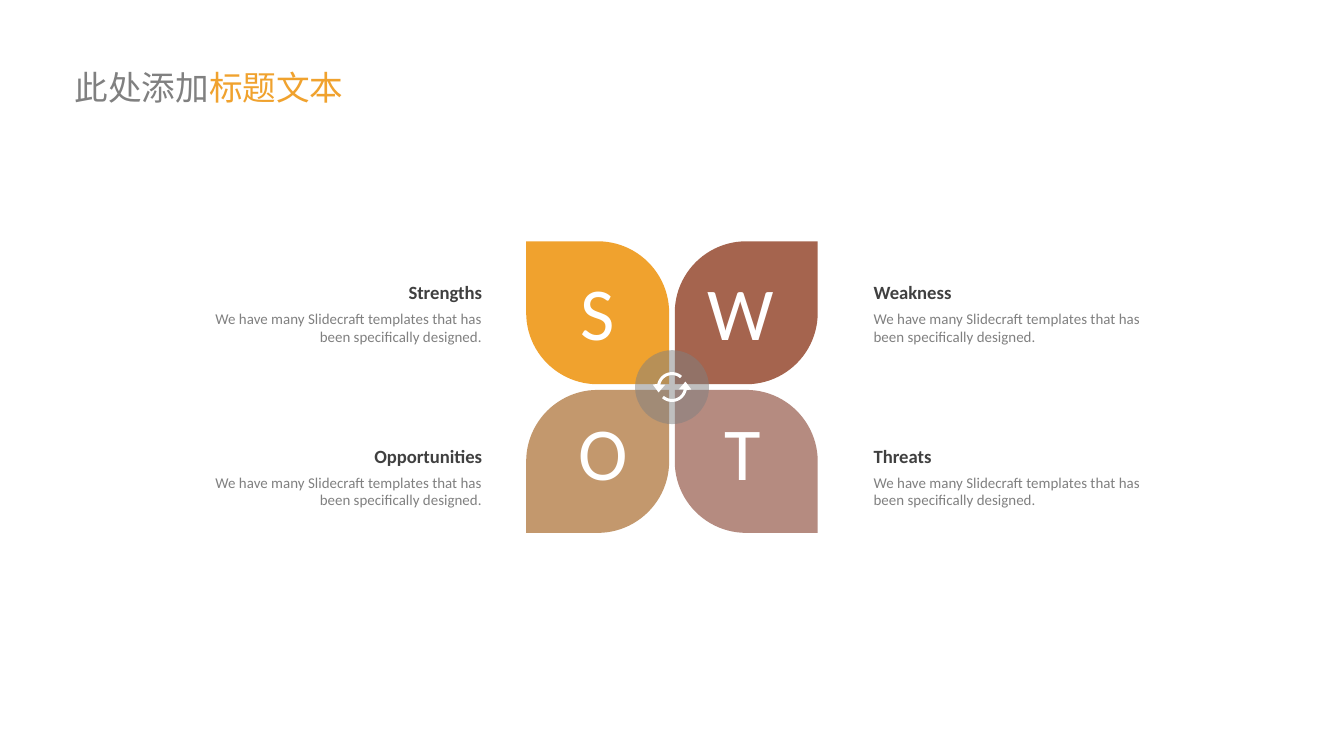
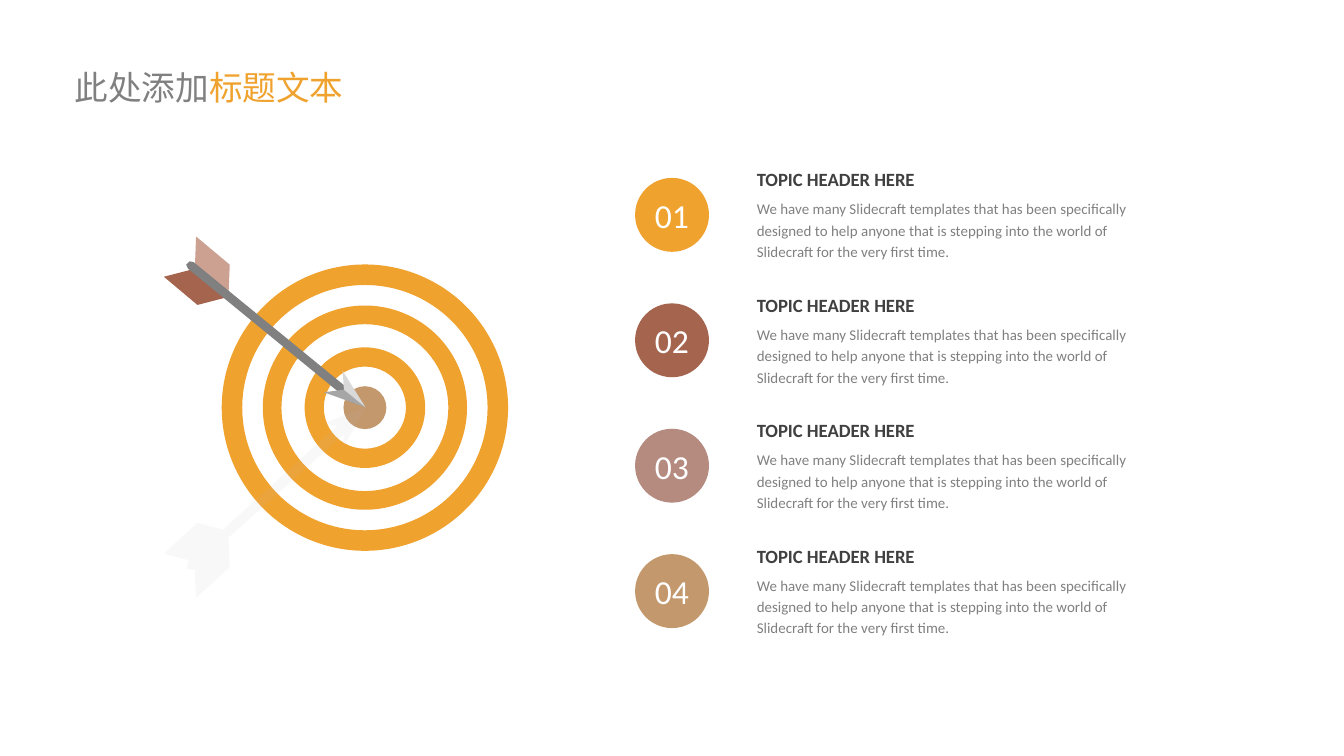
import math

from pptx import Presentation
from pptx import util as u
from pptx.dml.color import RGBColor
from pptx.enum import shapes, text
from pptx.oxml.ns import qn
from lxml import etree

COLORS = {
    "orange": "F0A22E", "rust": "A5644E", "tan": "C3986D", "rose": "B58B80",
    "blush": "CCA192", "gray": "808080", "dark": "404040", "white": "FFFFFF",
    "steel": "A6A6A6", "silver": "D9D9D9", "shade": "BFBFBF",
}
LATIN, CJK = "Calibri", "Noto Sans CJK SC"
SWOT_BODY = "We have many Slidecraft templates that has been specifically designed."
TOPIC_BODY = ("We have many Slidecraft templates that has been specifically designed "
              "to help anyone that is stepping into the world of Slidecraft "
              "for the very first time.")
CENTER_X, CENTER_Y = 360, 207.4
PETAL, HALF_GAP = 76.6, 1.5
BADGE = 39.6
SWOT = [
    ("S", "Strengths", "orange", 311, 18.7),
    ("W", "Weakness", "rust", 378.7, 36),
    ("O", "Opportunities", "tan", 309.6, 26.6),
    ("T", "Threats", "rose", 388.1, 19.4),
]
RINGS = [(153.4, 11), (109.4, 10), (64.6, 10.3)]
ARROW = [
    ("rust", [(122.4, 159.1), (105.8, 163.4), (87.8, 148.3), (104.4, 144)]),
    ("blush", [(122.4, 159.1), (123.1, 141.8), (105.1, 126.7), (104.4, 144)]),
    ("gray", [(100.8, 144), (99.7, 141.8), (101.5, 140), (103.7, 140.4),
              (190.8, 211.7), (191.9, 214.2), (189.4, 216), (187.9, 215.3)]),
    ("steel", [(173.5, 210.2), (195.8, 218.2), (184.3, 208.8)]),
    ("silver", [(184.3, 208.8), (195.8, 218.2), (183.6, 198.7)]),
]
ARROW_SHADOW = [
    (195.8, 218.2), (183.6, 240.5), (184.3, 232.6), (122.4, 288),
    (123.1, 303.8), (105.1, 320.4), (104.4, 304.6), (103.7, 305.3),
    (100.1, 304.6), (100.8, 301), (101.5, 300.2), (87.8, 296.6),
    (105.8, 280.1), (119.5, 283.7), (180.7, 228.2), (173.5, 226.8),
]


def rgb(name):
    """Return the named colour."""
    return RGBColor.from_string(COLORS[name])


def paint(sp, color, alpha=None):
    """Fill a shape flat, without line or shadow."""
    sp.shadow.inherit = False
    sp.fill.solid()
    sp.fill.fore_color.rgb = rgb(color)
    sp.line.fill.background()
    if alpha is not None:
        clr = next(sp._element.spPr.iter(qn("a:srgbClr")))
        etree.SubElement(clr, qn("a:alpha")).set("val", str(alpha * 1000))
    return sp


def add_preset(parent, kind, x, y, size, color, adjust=(), alpha=None):
    """Add a square preset shape."""
    sp = parent.add_shape(kind, u.Pt(x), u.Pt(y), u.Pt(size), u.Pt(size))
    for i, value in enumerate(adjust):
        sp.adjustments[i] = value
    return paint(sp, color, alpha)


def add_outline(parent, contours, color, alpha=None):
    """Add a freeform made of closed contours."""
    builder = None
    for contour in contours:
        pts = [(u.Pt(x), u.Pt(y)) for x, y in contour]
        if builder is None:
            builder = parent.build_freeform(*pts[0], scale=1)
        else:
            builder.move_to(*pts[0])
        builder.add_line_segments(pts[1:], close=True)
    return paint(builder.convert_to_shape(), color, alpha)


def add_run(p, content, size, color, bold=False, font=LATIN):
    """Append a formatted run."""
    r = p.add_run()
    r.text = content
    r.font.size = u.Pt(size)
    r.font.bold = bold
    r.font.name = font
    r.font.color.rgb = rgb(color)
    etree.SubElement(r._r.get_or_add_rPr(), qn("a:ea")).set("typeface", font)


def clear_margins(tf):
    """Remove the insets of a text frame."""
    tf.margin_left = tf.margin_right = tf.margin_top = tf.margin_bottom = 0


def add_text_box(slide, x, y, w, h, wrap=True):
    """Add an empty text box that fits its text and return its frame."""
    tf = slide.shapes.add_textbox(u.Pt(x), u.Pt(y), u.Pt(w), u.Pt(h)).text_frame
    clear_margins(tf)
    tf.word_wrap = wrap
    tf.auto_size = text.MSO_AUTO_SIZE.SHAPE_TO_FIT_TEXT
    return tf


def add_title(slide):
    """Add the two-colour slide title."""
    p = add_text_box(slide, 40, 36, 170, 21.6).paragraphs[0]
    add_run(p, "此处添加", 18, "gray", font=CJK)
    add_run(p, "标题文本", 18, "orange", font=CJK)


def add_note(slide, x, y, w, h, heading, body, align, body_spacing):
    """Add a bold heading with a small paragraph below."""
    tf = add_text_box(slide, x, y, w, h)
    p = tf.paragraphs[0]
    p.alignment, p.line_spacing = align, 1.2
    add_run(p, heading, 10, "dark", bold=True)
    p = tf.add_paragraph()
    p.alignment, p.line_spacing = align, body_spacing
    p.space_before = u.Pt(3)
    add_run(p, body, 8, "gray")


def add_letter(slide, x, y, w, letter):
    """Add a large white letter."""
    p = add_text_box(slide, x, y, w, 48, wrap=False).paragraphs[0]
    p.alignment = text.PP_ALIGN.CENTER
    add_run(p, letter, 40, "white")


def add_badge(slide, y, label, color):
    """Add a numbered circle."""
    sp = add_preset(slide.shapes, shapes.MSO_SHAPE.OVAL,
                    CENTER_X - BADGE / 2, y, BADGE, color)
    tf = sp.text_frame
    clear_margins(tf)
    tf.vertical_anchor = text.MSO_ANCHOR.MIDDLE
    p = tf.paragraphs[0]
    p.alignment = text.PP_ALIGN.CENTER
    add_run(p, label, 18, "white")


def add_cycle_icon(slide):
    """Add two curved arrows chasing each other."""
    def arc(radius, angles):
        return [(radius * math.cos(math.radians(a)), radius * math.sin(math.radians(a)))
                for a in angles]

    arrow = (arc(8, range(12, 133, 6)) + arc(6.4, range(132, 11, -6))
             + [(3.6, 1.3), (7.2, -2.9), (10.3, 1.3)])
    contours = [[(CENTER_X + s * x, CENTER_Y + s * y) for x, y in arrow]
                for s in (1, -1)]
    add_outline(slide.shapes, contours, "white")


def build_swot(slide):
    """Draw the four petals, their letters and notes."""
    for i, (_, _, color, _, _) in enumerate(SWOT):
        row, col = divmod(i, 2)
        x = CENTER_X + (HALF_GAP if col else -HALF_GAP - PETAL)
        y = CENTER_Y + (HALF_GAP if row else -HALF_GAP - PETAL)
        adjust = (0, 0.5) if row == col else (0.5, 0)
        add_preset(slide.shapes, shapes.MSO_SHAPE.ROUND_2_DIAG_RECTANGLE,
                   x, y, PETAL, color, adjust)
    for i, (letter, _, _, x, w) in enumerate(SWOT):
        add_letter(slide, x, 142.6 + i // 2 * 74.8, w, letter)
    add_preset(slide.shapes, shapes.MSO_SHAPE.OVAL, CENTER_X - BADGE / 2,
               CENTER_Y - BADGE / 2, BADGE, "gray", alpha=50)
    add_cycle_icon(slide)
    for i, (_, heading, _, _, _) in enumerate(SWOT):
        row, col = divmod(i, 2)
        align = text.PP_ALIGN.LEFT if col else text.PP_ALIGN.RIGHT
        add_note(slide, 468 if col else 110.6, 148.3 + row * 87.8, 147.6, 36.7,
                 heading, SWOT_BODY, align, 1.0)
    add_title(slide)


def build_target(slide):
    """Draw the target with its arrow and the numbered topics."""
    x, y = 195.5, 218.4
    target = slide.shapes.add_group_shape().shapes
    add_preset(target, shapes.MSO_SHAPE.OVAL, x - 11.5, y - 11.5, 23, "tan")
    for size, band in RINGS:
        add_preset(target, shapes.MSO_SHAPE.DONUT, x - size / 2, y - size / 2,
                   size, "orange", (band / size,))
    arrow = slide.shapes.add_group_shape().shapes
    for color, pts in ARROW:
        add_outline(arrow, [pts], color)
    add_outline(slide.shapes, [ARROW_SHADOW], "shade", alpha=10)
    for i, color in enumerate(("orange", "rust", "rose", "tan")):
        top = 87.8 + i * 67.2
        add_note(slide, 405.4, top, 209.5, 52.6, "TOPIC HEADER HERE", TOPIC_BODY,
                 text.PP_ALIGN.LEFT, 1.2)
        add_badge(slide, top + 7.5, f"{i + 1:02}", color)
    add_title(slide)


def main():
    """Build both slides and save the deck."""
    prs = Presentation()
    prs.slide_width, prs.slide_height = u.Pt(720), u.Pt(405)
    for build in (build_swot, build_target):
        build(prs.slides.add_slide(prs.slide_layouts[6]))
    prs.save("out.pptx")


if __name__ == "__main__":
    main()
